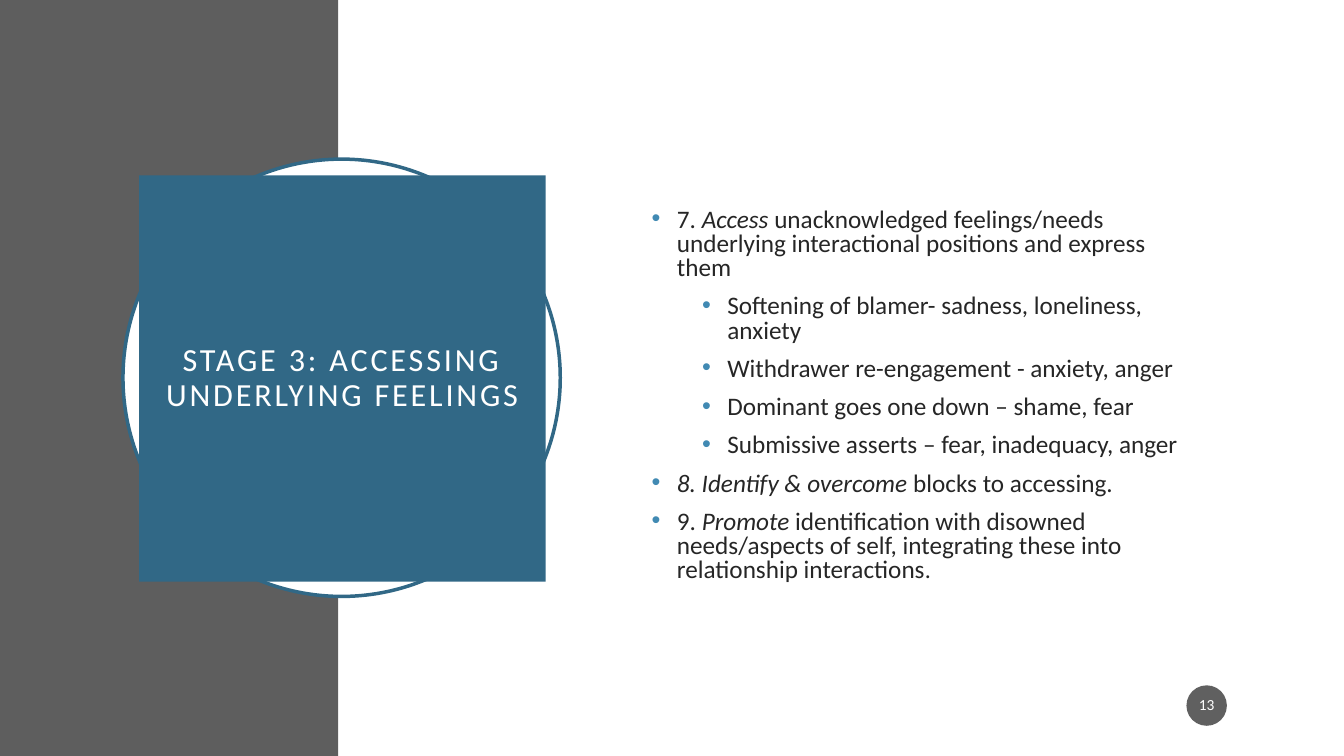
from dataclasses import dataclass

from lxml import etree
from pptx import Presentation
from pptx import util as u
from pptx.dml import color
from pptx.enum import shapes, text
from pptx.oxml import ns

FONT = "Calibri"
WHITE, GREY, BLUE = "FFFFFF", "5E5E5E", "316886"
BULLET, INK, BADGE = "418AB3", "262626", "1D1D1D"
RECT, OVAL = shapes.MSO_SHAPE.RECTANGLE, shapes.MSO_SHAPE.OVAL
STEP_INDENT, DETAIL_INDENT, HANGING = 1.27, 2.54, 0.635


@dataclass
class Panel:
    kind: shapes.MSO_SHAPE
    left: float
    top: float
    width: float
    height: float
    fill: str
    line: str = ""


@dataclass
class Span:
    words: str
    italic: bool = False
    size: float = 18


@dataclass
class Bullet:
    spans: list[Span]
    level: int = 0


def rgb(value: str) -> color.RGBColor:
    return color.RGBColor.from_string(value)


def add_panel(page, panel: Panel):
    shape = page.shapes.add_shape(
        panel.kind, u.Cm(panel.left), u.Cm(panel.top), u.Cm(panel.width), u.Cm(panel.height))
    shape.shadow.inherit = False
    shape.fill.solid()
    shape.fill.fore_color.rgb = rgb(panel.fill)
    if panel.line:
        shape.line.color.rgb = rgb(panel.line)
        shape.line.width = u.Pt(2.5)
    else:
        shape.line.fill.background()
    return shape


def set_frame(box, side: float, top: float, bottom: float):
    frame = box.text_frame
    frame.word_wrap = True
    frame.vertical_anchor = text.MSO_ANCHOR.MIDDLE
    frame.margin_left = frame.margin_right = u.Cm(side)
    frame.margin_top, frame.margin_bottom = u.Cm(top), u.Cm(bottom)
    return frame


def add_span(para, span: Span, ink: str):
    run = para.add_run()
    run.text = span.words
    run.font.name = FONT
    run.font.size = u.Pt(span.size)
    run.font.italic = span.italic
    run.font.color.rgb = rgb(ink)
    return run


def add_label(shape, span: Span, side: float, top: float):
    para = set_frame(shape, side, top, top).paragraphs[0]
    para.alignment = text.PP_ALIGN.CENTER
    para.line_spacing = 0.9
    return add_span(para, span, WHITE)


def add_bullet(para, bullet: Bullet) -> None:
    para.level = bullet.level
    para.line_spacing = 0.8
    para.space_before = u.Pt(10)
    props = para._p.get_or_add_pPr()
    props.set("marL", str(u.Cm(DETAIL_INDENT if bullet.level else STEP_INDENT)))
    props.set("indent", str(-u.Cm(HANGING)))
    tint = etree.SubElement(props, ns.qn("a:buClr"))
    etree.SubElement(tint, ns.qn("a:srgbClr"), val=BULLET)
    etree.SubElement(props, ns.qn("a:buFont"), typeface="Arial")
    etree.SubElement(props, ns.qn("a:buChar"), char="•")
    for span in bullet.spans:
        add_span(para, span, INK)


BACKDROP = [
    Panel(RECT, 0, 0, 8.53, 19.05, GREY),
    Panel(RECT, 8.53, 0, 25.34, 19.05, WHITE),
    Panel(OVAL, 3.1, 4.01, 11.02, 11.02, WHITE, BLUE),
]
TITLE = Panel(RECT, 3.51, 4.42, 10.24, 10.24, BLUE)
NUMBER = Panel(OVAL, 29.9, 17.27, 1.02, 1.02, BADGE)

DETAILS = [
    "Softening of blamer- sadness, loneliness, anxiety",
    "Withdrawer re-engagement - anxiety, anger",
    "Dominant goes one down – shame, fear",
    "Submissive asserts – fear, inadequacy, anger",
]
BULLETS = [
    Bullet([Span("7. "), Span("Access ", True),
            Span("unacknowledged feelings/needs underlying interactional "
                 "positions and express them")]),
    *[Bullet([Span(detail)], 1) for detail in DETAILS],
    Bullet([Span("8. Identify & overcome", True), Span(" blocks to accessing.")]),
    Bullet([Span("9. "), Span("Promote ", True),
            Span("identification with disowned needs/aspects of self, "
                 "integrating these into relationship interactions"),
            Span(".", size=17)]),
]


def main() -> None:
    deck = Presentation()
    deck.slide_width, deck.slide_height = u.Cm(33.87), u.Cm(19.05)
    page = deck.slides.add_slide(deck.slide_layouts[6])

    # Background halves and ring
    for panel in BACKDROP:
        add_panel(page, panel)

    # Title square with spaced capitals
    title = add_label(add_panel(page, TITLE),
                      Span("STAGE 3: ACCESSING UNDERLYING FEELINGS", size=23), 0.51, 0.51)
    title._r.get_or_add_rPr().set("spc", "200")

    # Steps and their details
    box = page.shapes.add_textbox(u.Cm(15.54), u.Cm(3.89), u.Cm(14.78), u.Cm(11.25))
    frame = set_frame(box, 0.25, 1.07, 0.13)
    for index, bullet in enumerate(BULLETS):
        add_bullet(frame.add_paragraph() if index else frame.paragraphs[0], bullet)

    # Translucent page number badge
    badge = add_panel(page, NUMBER)
    tint = badge.fill._xPr.find(ns.qn("a:solidFill"))[0]
    etree.SubElement(tint, ns.qn("a:alpha"), val="70000")
    add_label(badge, Span("13", size=11), 0.05, 0.13)

    deck.save("out.pptx")


if __name__ == "__main__":
    main()
